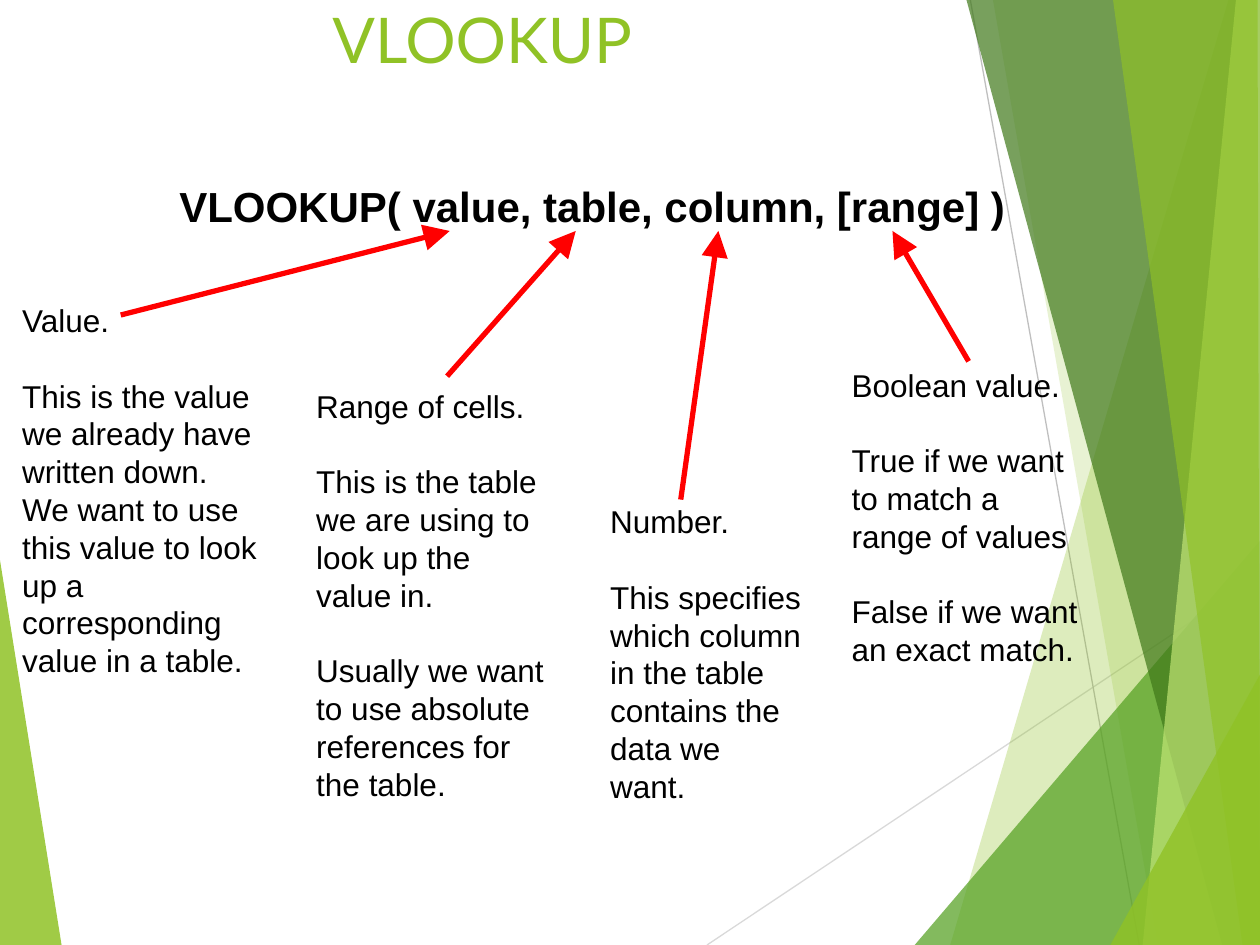
"""Build the VLOOKUP syntax slide with its notes and arrows."""
from lxml import etree
from pptx import Presentation
from pptx.dml.color import RGBColor
from pptx.enum.shapes import MSO_CONNECTOR
from pptx.enum.text import MSO_ANCHOR, PP_ALIGN
from pptx.oxml.ns import qn
from pptx.util import Pt

STRAIGHT = MSO_CONNECTOR.STRAIGHT
TOP = MSO_ANCHOR.TOP
LEFT = PP_ALIGN.LEFT

BLACK = RGBColor(0x00, 0x00, 0x00)
RED = RGBColor(0xFF, 0x00, 0x00)
LIME = RGBColor(0x90, 0xC2, 0x26)
GREEN = RGBColor(0x54, 0xA0, 0x21)
DARK = RGBColor(0x3F, 0x78, 0x19)
PALE = RGBColor(0xC0, 0xE4, 0x74)
SILVER = RGBColor(0xD9, 0xD9, 0xD9)
GRAY = RGBColor(0xBF, 0xBF, 0xBF)

WIDE, HIGH = 720, 540
PITCH = 21.6

TITLE = "VLOOKUP"
FORMULA = "VLOOKUP( value, table, column, [range] )"

NOTES = [
    (12.7, 172, [
        (90, 1, "Value."),
        (147, 8, "This is the value we already have written down.\n"
                 "We want to use this value to look up a corresponding "
                 "value in a table."),
    ]),
    (180.7, 221, [
        (124, 1, "Range of cells."),
        (131, 4, "This is the table we are using to look up the value in."),
        (134, 5, "Usually we want to use absolute references for the table."),
    ]),
    (348.7, 287, [
        (73, 1, "Number."),
        (115, 6, "This specifies which column in the table contains the "
                 "data we\nwant."),
    ]),
    (486.7, 209, [
        (124, 1, "Boolean value."),
        (127, 3, "True if we want to match a\nrange of values"),
        (133, 2, "False if we want an exact match."),
    ]),
]

ARROWS = [
    ((69, 180), (257, 132)),
    ((255.5, 215), (329, 132)),
    ((389, 285.5), (410.5, 132)),
    ((553.5, 206.5), (510, 132)),
]

RULES = [
    ((404, 540), (720, 329), SILVER),
    ((554.5, 0), (651, 540), GRAY),
]

FACETS = [
    (LIME, 85, [(0, 320), (35.2, 540), (0, 540)]),
    (LIME, 30, [(702, 0), (543, 540), (720, 540), (720, 0)]),
    (LIME, 20, [(567.4, 0), (661.7, 540), (720, 540), (720, 0)]),
    (GREEN, 72, [(522.7, 540), (720, 309), (720, 540)]),
    (DARK, 70, [(552.3, 0), (698.4, 540), (720, 540), (720, 0)]),
    (PALE, 70, [(706.3, 0), (653, 540), (720, 540), (720, 0)]),
    (LIME, 65, [(636, 0), (710, 540), (720, 540), (718.6, 0)]),
    (LIME, 80, [(634.5, 540), (720, 385.5), (720, 540)]),
]


def add_facet(slide, color, alpha, points):
    spots = [(Pt(x), Pt(y)) for x, y in points]
    pen = slide.shapes.build_freeform(*spots[0])
    pen.add_line_segments(spots[1:], close=True)
    shape = pen.convert_to_shape()
    shape.shadow.inherit = False
    shape.fill.solid()
    shape.fill.fore_color.rgb = color
    shape.line.fill.background()
    tint = shape.fill._xPr.find(".//" + qn("a:srgbClr"))
    etree.SubElement(tint, qn("a:alpha"), val=str(alpha * 1000))


def add_line(slide, start, end, color, width, head=False):
    ends = [Pt(n) for n in (*start, *end)]
    link = slide.shapes.add_connector(STRAIGHT, *ends)
    link.line.color.rgb = color
    link.line.width = Pt(width)
    props = link._element.spPr
    if head:
        etree.SubElement(props.get_or_add_ln(), qn("a:tailEnd"),
                         type="triangle", w="lg", len="lg")
    etree.SubElement(props, qn("a:effectLst"))


def write(shape, text, font, size, color, bold=False, pitch=None):
    frame = shape.text_frame
    frame.word_wrap = True
    frame.vertical_anchor = TOP
    frame.margin_left = frame.margin_right = 0
    frame.margin_top = frame.margin_bottom = 0
    para = frame.paragraphs[0]
    para.alignment = LEFT
    para.space_before = Pt(0)
    if pitch:
        para.line_spacing = Pt(pitch)
    for i, part in enumerate(text.split("\n")):
        if i:
            para.add_line_break()
        run = para.add_run()
        run.text = part
        run.font.name = font
        run.font.size = Pt(size)
        run.font.bold = bold
        run.font.color.rgb = color


def add_box(slide, left, top, width, height):
    return slide.shapes.add_textbox(Pt(left), Pt(top), Pt(width), Pt(height))


def main():
    deck = Presentation()
    deck.slide_width, deck.slide_height = Pt(WIDE), Pt(HIGH)
    slide = deck.slides.add_slide(deck.slide_layouts[5])

    for start, end, color in RULES:
        add_line(slide, start, end, color, 0.75)
    for facet in FACETS:
        add_facet(slide, *facet)

    title = slide.shapes.title
    title.left, title.top = Pt(48), Pt(0)
    title.width, title.height = Pt(500), Pt(54)
    write(title, TITLE, "Lato", 36, LIME)
    title.text_frame.margin_left = Pt(142)

    box = add_box(slide, 102.5, 103, 490, 28)
    write(box, FORMULA, "Arial", 24, BLACK, bold=True)

    for left, top, blocks in NOTES:
        for width, lines, text in blocks:
            box = add_box(slide, left, top, width, lines * PITCH)
            write(box, text, "Arial", 18, BLACK, pitch=PITCH)
            top += (lines + 1) * PITCH

    for start, end in ARROWS:
        add_line(slide, start, end, RED, 3, head=True)

    deck.save("out.pptx")


if __name__ == "__main__":
    main()
